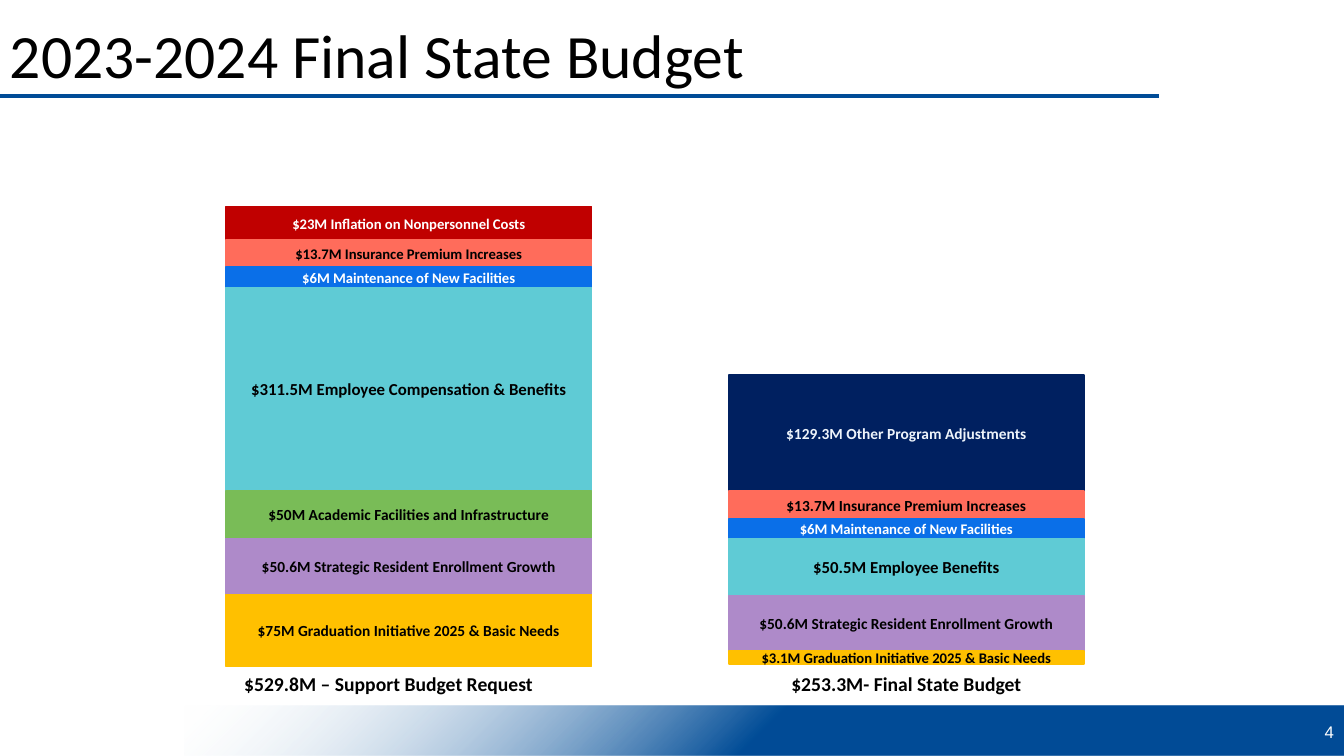
from dataclasses import dataclass

from pptx import Presentation
from pptx.dml.color import RGBColor
from pptx.enum.shapes import MSO_CONNECTOR, MSO_SHAPE
from pptx.enum.text import MSO_ANCHOR, PP_ALIGN
from pptx.oxml import parse_xml
from pptx.oxml.ns import nsdecls
from pptx.oxml.xmlchemy import OxmlElement
from pptx.shapes.autoshape import Shape
from pptx.slide import Slide
from pptx.text.text import TextFrame
from pptx.util import Inches, Pt

WHITE = RGBColor(0xFF, 0xFF, 0xFF)
BLACK = RGBColor(0x00, 0x00, 0x00)
PALE = RGBColor(0xEE, 0xF4, 0xFB)
BRAND_BLUE = RGBColor(0x00, 0x4C, 0x97)
FADE = RGBColor(0xED, 0xF4, 0xFA)
RED = RGBColor(0xC0, 0x00, 0x00)
CORAL = RGBColor(0xFF, 0x6C, 0x5B)
BLUE = RGBColor(0x0A, 0x6F, 0xE8)
TEAL = RGBColor(0x5F, 0xCB, 0xD5)
GREEN = RGBColor(0x79, 0xBC, 0x57)
PURPLE = RGBColor(0xAE, 0x8A, 0xC9)
GOLD = RGBColor(0xFF, 0xC0, 0x00)
NAVY = RGBColor(0x00, 0x20, 0x60)


@dataclass
class Band:
    text: str
    height: float
    fill: RGBColor
    size: float = 11
    color: RGBColor = BLACK


@dataclass
class Stack:
    left: float
    top: float
    width: float
    bands: list[Band]


@dataclass
class Label:
    text: str
    box: tuple[float, float, float, float]
    size: float
    color: RGBColor = BLACK
    font: str = "Calibri"
    bold: bool = False
    align: PP_ALIGN = PP_ALIGN.CENTER
    anchor: MSO_ANCHOR = MSO_ANCHOR.MIDDLE
    spacing: float = 1.0


STACKS = [
    Stack(2.24, 2.05, 3.63, [
        Band("$23M Inflation on Nonpersonnel Costs", 0.33, RED, 10.5, WHITE),
        Band("$13.7M Insurance Premium Increases", 0.27, CORAL, 10.5),
        Band("$6M Maintenance of New Facilities", 0.2, BLUE, 10.5, WHITE),
        Band("$311.5M Employee Compensation & Benefits", 2.02, TEAL, 12),
        Band("$50M Academic Facilities and Infrastructure", 0.47, GREEN),
        Band("$50.6M Strategic Resident Enrollment Growth", 0.56, PURPLE),
        Band("$75M Graduation Initiative 2025 & Basic Needs", 0.71, GOLD),
    ]),
    Stack(7.23, 3.72, 3.52, [
        Band("$129.3M Other Program Adjustments", 1.15, NAVY, color=PALE),
        Band("$13.7M Insurance Premium Increases", 0.28, CORAL),
        Band("$6M Maintenance of New Facilities", 0.19, BLUE, 10.5, WHITE),
        Band("$50.5M Employee Benefits", 0.57, TEAL, 12),
        Band("$50.6M Strategic Resident Enrollment Growth", 0.55, PURPLE),
        Band("$3.1M Graduation Initiative 2025 & Basic Needs", 0.13, GOLD, 10.5),
    ]),
]

LABELS = [
    Label("4", (12.67, 7.06, 0.66, 0.4), 12, WHITE, "Arial", align=PP_ALIGN.RIGHT),
    Label("2023-2024 Final State Budget", (0, 0.15, 11.5, 0.87), 44,
          align=PP_ALIGN.LEFT, spacing=0.9),
    Label("$529.8M – Support Budget Request", (1.72, 6.62, 4.27, 0.34), 14,
          bold=True, anchor=MSO_ANCHOR.TOP),
    Label("$253.3M- Final State Budget", (6.8, 6.62, 4.38, 0.34), 14,
          bold=True, anchor=MSO_ANCHOR.TOP),
]


def write_text(tf: TextFrame, label: Label) -> None:
    tf.word_wrap = True
    tf.vertical_anchor = label.anchor
    p = tf.paragraphs[0]
    p.alignment = label.align
    p.line_spacing = label.spacing
    r = p.add_run()
    r.text = label.text
    font_format = {"name": label.font, "size": Pt(label.size), "bold": label.bold}
    for name, value in font_format.items():
        setattr(r.font, name, value)
    r.font.color.rgb = label.color


def add_rectangle(s: Slide, box: tuple[float, float, float, float]) -> Shape:
    sp = s.shapes.add_shape(MSO_SHAPE.RECTANGLE, *map(Inches, box))
    sp.shadow.inherit = False
    return sp


def add_label(s: Slide, label: Label) -> None:
    sp = s.shapes.add_textbox(*map(Inches, label.box))
    write_text(sp.text_frame, label)


def add_stack(s: Slide, stack: Stack) -> None:
    """Draw the bands downwards, each starting where the last one ends."""
    top = stack.top
    for band in stack.bands:
        box = (stack.left, top, stack.width, band.height)
        sp = add_rectangle(s, box)
        sp.fill.solid()
        sp.fill.fore_color.rgb = band.fill
        sp.line.color.rgb = band.fill
        sp.line.width = Pt(1)
        write_text(sp.text_frame, Label(band.text, box, band.size, band.color, bold=True))
        top += band.height


def add_title_rule(s: Slide) -> None:
    rule = s.shapes.add_connector(
        MSO_CONNECTOR.STRAIGHT, Inches(0), Inches(0.95), Inches(11.5), Inches(0.95))
    rule.line.color.rgb = BRAND_BLUE
    rule.line.width = Pt(3)
    rule.line._get_or_add_ln().append(OxmlElement("a:round"))
    rule._element.spPr.append(OxmlElement("a:effectLst"))


def add_footer_band(s: Slide) -> None:
    """Draw the footer, fading out from its bottom right corner."""
    sp = add_rectangle(s, (1.83, 7, 11.5, 0.5))
    sp.line.fill.background()
    gradient = parse_xml(
        f'<a:gradFill {nsdecls("a")} rotWithShape="1"><a:gsLst>'
        f'<a:gs pos="0"><a:srgbClr val="{BRAND_BLUE}"/></a:gs>'
        f'<a:gs pos="50000"><a:srgbClr val="{BRAND_BLUE}"/></a:gs>'
        f'<a:gs pos="100000"><a:srgbClr val="{FADE}"><a:alpha val="0"/></a:srgbClr></a:gs>'
        '</a:gsLst><a:path path="circle">'
        '<a:fillToRect l="100000" t="100000"/></a:path></a:gradFill>')
    sp._element.spPr.prstGeom.addnext(gradient)


def main() -> None:
    prs = Presentation()
    prs.slide_width, prs.slide_height = Inches(13.33), Inches(7.5)
    s = prs.slides.add_slide(prs.slide_layouts[6])
    add_title_rule(s)
    add_footer_band(s)
    for label in LABELS:
        add_label(s, label)
    for stack in STACKS:
        add_stack(s, stack)
    prs.save("out.pptx")


if __name__ == "__main__":
    main()
